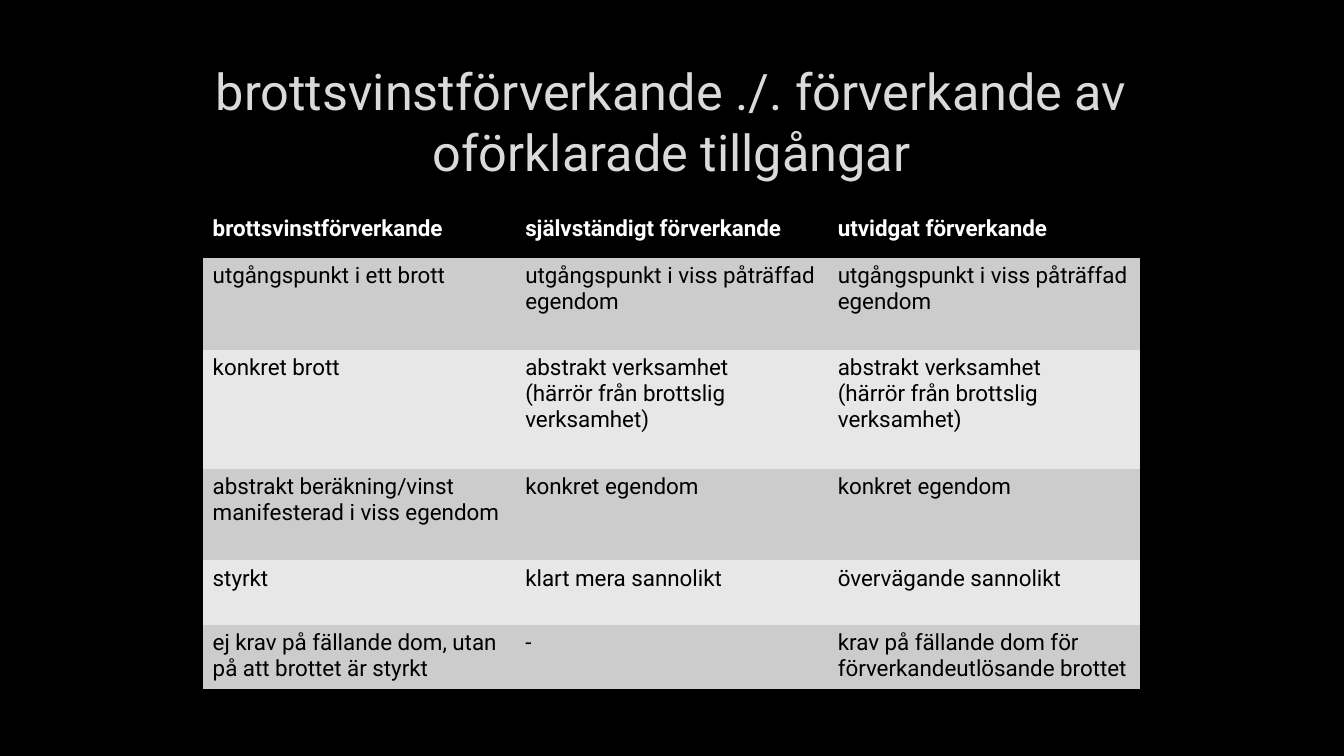
from copy import deepcopy

from pptx import Presentation
from pptx.dml.color import RGBColor
from pptx.enum.text import MSO_ANCHOR, MSO_AUTO_SIZE, PP_ALIGN
from pptx.oxml.ns import qn
from pptx.util import Inches, Pt

FONT = "Roboto"
NO_STYLE_NO_GRID = "{2D5ABB26-0587-4C30-8999-92F81FD0307C}"
TITLE = "brottsvinstförverkande ./. förverkande av oförklarade tillgångar"
FOUND_PROPERTY = "utgångspunkt i viss påträffad egendom"
ABSTRACT_ACTIVITY = "abstrakt verksamhet \v(härrör från brottslig verksamhet)"
COMPARISON = [
    ("brottsvinstförverkande", "självständigt förverkande", "utvidgat förverkande"),
    ("utgångspunkt i ett brott", FOUND_PROPERTY, FOUND_PROPERTY),
    ("konkret brott", ABSTRACT_ACTIVITY, ABSTRACT_ACTIVITY),
    ("abstrakt beräkning/vinst manifesterad i viss egendom", "konkret egendom", "konkret egendom"),
    ("styrkt", "klart mera sannolikt", "övervägande sannolikt"),
    ("ej krav på fällande dom, utan på att brottet är styrkt", "-",
     "krav på fällande dom för förverkandeutlösande brottet"),
]
ROW_HEIGHTS = [0.47, 0.91, 1.18, 0.91, 0.64, 0.64]
COLUMN_WIDTH = 3.1
HEADER_FILL = "000000"
BAND_FILLS = ["E7E7E7", "CCCCCC"]


def rgb(hex_colour):
    return RGBColor.from_string(hex_colour)


def paint(fill, hex_colour):
    fill.solid()
    fill.fore_color.rgb = rgb(hex_colour)


def write(frame, text, colour, **font_format):
    """Fill a text frame, giving runs and line breaks the same format."""
    frame.text = text
    paragraph = frame.paragraphs[0]
    for run in paragraph.runs:
        for attribute, value in {"name": FONT, **font_format}.items():
            setattr(run.font, attribute, value)
        run.font.color.rgb = rgb(colour)
    for line_break in paragraph._p.findall(qn("a:br")):
        line_break.append(deepcopy(paragraph.runs[0].font._element))


def add_title(slide):
    title = slide.shapes.title
    box = {"left": 1, "top": 0.67, "width": 11.32, "height": 1.06}
    for attribute, inches in box.items():
        setattr(title, attribute, Inches(inches))
    frame = title.text_frame
    frame.auto_size = MSO_AUTO_SIZE.NONE
    frame.vertical_anchor = MSO_ANCHOR.MIDDLE
    write(frame, TITLE, "DADADA", size=Pt(36))
    frame.paragraphs[0].alignment = PP_ALIGN.CENTER


def add_comparison(slide):
    columns = len(COMPARISON[0])
    frame = slide.shapes.add_table(
        len(COMPARISON), columns, Inches(2.01), Inches(2.09),
        Inches(columns * COLUMN_WIDTH), Inches(sum(ROW_HEIGHTS)))
    table = frame.table
    table._tbl.tblPr.find(qn("a:tableStyleId")).text = NO_STYLE_NO_GRID
    for column in table.columns:
        column.width = Inches(COLUMN_WIDTH)
    for index, (row, height, texts) in enumerate(zip(table.rows, ROW_HEIGHTS, COMPARISON)):
        row.height = Inches(height)
        is_header = index == 0
        for cell, text in zip(row.cells, texts):
            paint(cell.fill, HEADER_FILL if is_header else BAND_FILLS[index % 2])
            write(cell.text_frame, text, "FFFFFF" if is_header else "000000",
                  size=Pt(16), bold=is_header)


def main():
    presentation = Presentation()
    presentation.slide_width = Inches(13.33)
    presentation.slide_height = Inches(7.5)
    slide = presentation.slides.add_slide(presentation.slide_layouts.get_by_name("Title Only"))
    paint(slide.background.fill, "000000")
    add_title(slide)
    add_comparison(slide)
    presentation.save("out.pptx")


if __name__ == "__main__":
    main()
